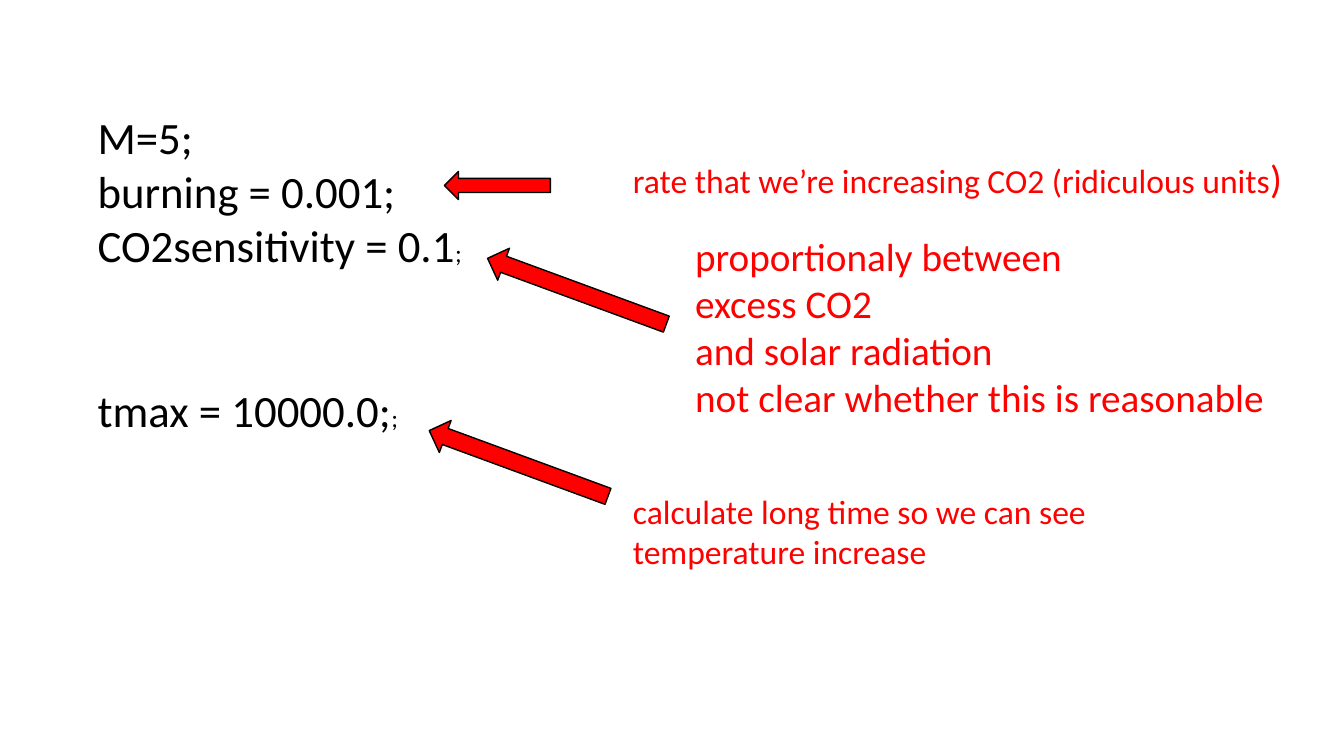
from pptx import Presentation
from pptx.dml.color import RGBColor
from pptx.enum.shapes import MSO_SHAPE
from pptx.enum.text import MSO_AUTO_SIZE
from pptx.util import Cm, Pt

COLORS = {"code": "000000", "note": "FF0000", "outline": "000000"}
FONT = "Calibri"
CODE_LEFT, CODE_WIDTH = 2.21, 16.92
NOTE_LEFT, WIDE_NOTE = 15.7, 19.18


def color(name):
    """Return the named colour."""
    return RGBColor.from_string(COLORS[name])


def add_run(paragraph, text, *, size, fill):
    """Append formatted text to a paragraph."""
    run = paragraph.add_run()
    run.text = text
    run.font.name = FONT
    run.font.size = Pt(size)
    run.font.color.rgb = color(fill)


def add_text(slide, lines, *, left, top, width, height, size, fill, ending="", ending_size=18):
    """Add a text box of lines, with an optional ending in another size."""
    shape = slide.shapes.add_textbox(Cm(left), Cm(top), Cm(width), Cm(height))
    frame = shape.text_frame
    frame.word_wrap = True
    frame.auto_size = MSO_AUTO_SIZE.SHAPE_TO_FIT_TEXT
    for index, line in enumerate(lines):
        paragraph = frame.add_paragraph() if index else frame.paragraphs[0]
        add_run(paragraph, line, size=size, fill=fill)
    if ending:
        add_run(paragraph, ending, size=ending_size, fill=fill)


def add_arrow(slide, *, left, top, width=4.8, height=0.86, rotation=20.2):
    """Add a red arrow that points from a note to its code line."""
    shape = slide.shapes.add_shape(
        MSO_SHAPE.LEFT_ARROW, Cm(left), Cm(top), Cm(width), Cm(height))
    shape.rotation = rotation
    shape.shadow.inherit = False
    shape.fill.solid()
    shape.fill.fore_color.rgb = color("note")
    shape.line.color.rgb = color("outline")
    shape.line.width = Pt(1)


def add_code(slide, lines, *, top, height):
    """Add code lines that end in a small semicolon."""
    add_text(slide, lines, left=CODE_LEFT, top=top, width=CODE_WIDTH, height=height,
             size=32, fill="code", ending=";")


def add_note(slide, lines, *, top, height, left=NOTE_LEFT, width=WIDE_NOTE, size=24, ending=""):
    """Add a red explanatory note."""
    add_text(slide, lines, left=left, top=top, width=width, height=height,
             size=size, fill="note", ending=ending, ending_size=28)


def main():
    """Build the slide of annotated model parameters."""
    presentation = Presentation()
    presentation.slide_width, presentation.slide_height = Cm(33.87), Cm(19.05)
    slide = presentation.slides.add_slide(presentation.slide_layouts[6])

    add_code(slide, ["M=5;", "burning = 0.001;", "CO2sensitivity = 0.1"], top=2.64, height=4.37)
    add_note(slide, ["rate that we’re increasing CO2 (ridiculous units"],
             top=3.76, height=1.45, ending=")")
    add_arrow(slide, left=11.2, top=4.32, width=2.67, height=0.71, rotation=0)
    add_note(slide, ["proportionaly between", "excess CO2", "and solar radiation",
                     "not clear whether this is reasonable"],
             left=17.27, top=5.72, height=5.05, size=28)
    add_arrow(slide, left=12.14, top=6.91)
    add_code(slide, ["tmax = 10000.0;"], top=9.53, height=1.63)
    add_arrow(slide, left=10.67, top=11.25)
    add_note(slide, ["calculate long time so we can see temperature increase"],
             top=12.24, width=16.41, height=2.31)

    presentation.save("out.pptx")


if __name__ == "__main__":
    main()
